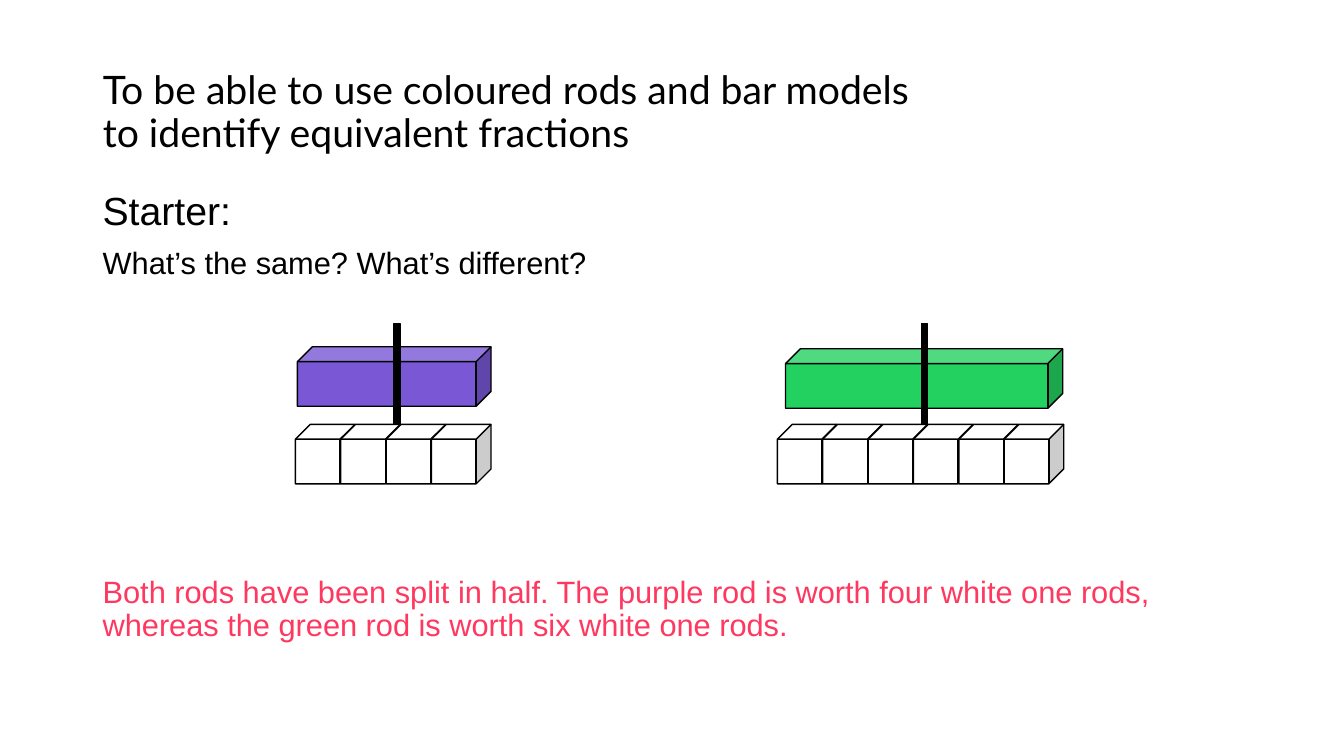
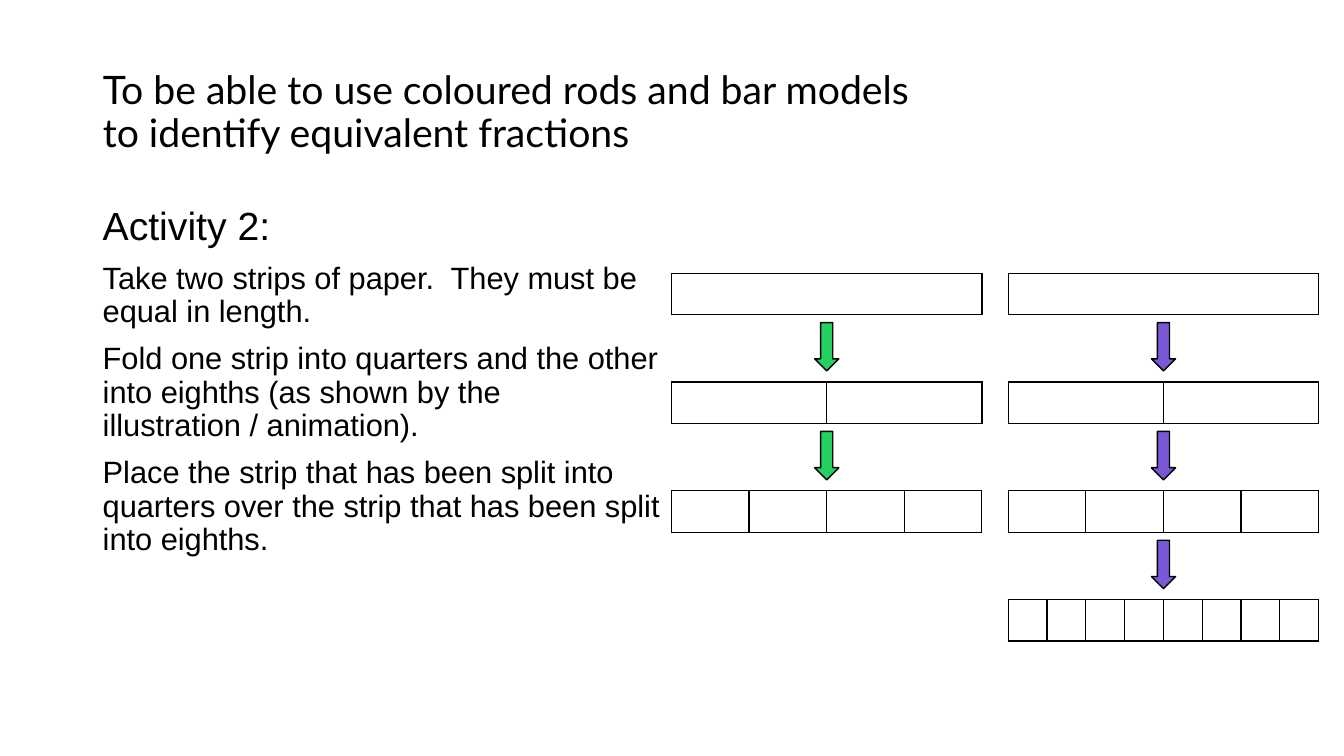
from typing import NamedTuple

from lxml import etree
from pptx import Presentation
from pptx.dml.color import RGBColor
from pptx.enum.shapes import MSO_SHAPE
from pptx.enum.text import MSO_ANCHOR, MSO_AUTO_SIZE, PP_ALIGN
from pptx.oxml.ns import qn
from pptx.slide import Slide
from pptx.util import Inches, Pt

BLACK = RGBColor(0x00, 0x00, 0x00)
WHITE = RGBColor(0xFF, 0xFF, 0xFF)
GREEN = RGBColor(0x23, 0xD1, 0x60)
PURPLE = RGBColor(0x79, 0x57, 0xD5)
PINK = RGBColor(0xFF, 0x38, 0x60)

CUBE = MSO_SHAPE.CUBE
RECT = MSO_SHAPE.RECTANGLE
ARROW = MSO_SHAPE.DOWN_ARROW
LEFT = PP_ALIGN.LEFT
MIDDLE = MSO_ANCHOR.MIDDLE
TOP = MSO_ANCHOR.TOP
FIXED = MSO_AUTO_SIZE.NONE

TITLE = "To be able to use coloured rods and bar models\vto identify equivalent fractions"
MARGIN = 0.92
HEAD = 28
BODY = 22
CUBE_SIZE = 0.59
CUBE_STEP = 0.45
CUBE_TOP = 4.21
STRIP_TOP = 2.71
STRIP_STEP = 1.08
STRIP_WIDTH = 3.08
STRIP_HEIGHT = 0.41
ARROW_WIDTH = 0.24
ARROW_HEIGHT = 0.48
ARROW_DROP = 0.49


class Box(NamedTuple):
    left: float
    top: float
    width: float
    height: float


class Line(NamedTuple):
    text: str
    size: int = BODY
    color: RGBColor = BLACK


class Rod(NamedTuple):
    box: Box
    color: RGBColor
    ones: int
    start: float
    split: float


class Fold(NamedTuple):
    left: float
    color: RGBColor
    steps: int


RODS = [
    Rod(Box(2.95, 3.44, 1.92, CUBE_SIZE), PURPLE, 4, 2.93, 3.91),
    Rod(Box(7.79, 3.46, 2.75, CUBE_SIZE), GREEN, 6, 7.71, 9.14),
]
FOLDS = [Fold(6.66, GREEN, 3), Fold(10, PURPLE, 4)]


def inches(box: Box) -> list[int]:
    return [Inches(value) for value in box]


def add_slide(deck) -> Slide:
    slide = deck.slides.add_slide(deck.slide_layouts[5])
    title = slide.shapes.title
    title.left, title.top, title.width, title.height = inches(Box(MARGIN, 0.4, 9.6, 1.45))
    frame = title.text_frame
    frame.text = TITLE
    frame.word_wrap = True
    frame.auto_size = FIXED
    frame.vertical_anchor = MIDDLE
    para = frame.paragraphs[0]
    para.alignment = LEFT
    para.line_spacing = 0.9
    para.font.name = "Lato"
    para.font.size = Pt(HEAD)
    para.font.color.rgb = BLACK
    return slide


def add_text(slide: Slide, box: Box, lines: list[Line]) -> None:
    frame = slide.shapes.add_textbox(*inches(box)).text_frame
    frame.word_wrap = True
    frame.vertical_anchor = TOP
    for index, line in enumerate(lines):
        para = frame.add_paragraph() if index else frame.paragraphs[0]
        para.text = line.text
        para.line_spacing = 0.9
        para.space_before = Pt(10 if index else 0)
        para.font.name = "Arial"
        para.font.size = Pt(line.size)
        para.font.color.rgb = line.color


def add_solid(slide: Slide, kind: MSO_SHAPE, box: Box, color: RGBColor) -> None:
    shape = slide.shapes.add_shape(kind, *inches(box))
    shape.shadow.inherit = False
    shape.fill.solid()
    shape.fill.fore_color.rgb = color
    shape.line.color.rgb = BLACK
    shape.line.width = Pt(1)


def add_rod(slide: Slide, rod: Rod) -> None:
    for index in range(rod.ones):
        left = rod.start + index * CUBE_STEP
        add_solid(slide, CUBE, Box(left, CUBE_TOP, CUBE_SIZE, CUBE_SIZE), WHITE)
    add_solid(slide, CUBE, rod.box, rod.color)
    add_solid(slide, RECT, Box(rod.split, 3.21, 0.06, 1), BLACK)


def add_border(cell) -> None:
    props = cell._tc.get_or_add_tcPr()
    for side in ("a:lnL", "a:lnR", "a:lnT", "a:lnB"):
        edge = etree.SubElement(props, qn(side), w=str(Pt(1)))
        fill = etree.SubElement(edge, qn("a:solidFill"))
        etree.SubElement(fill, qn("a:srgbClr"), val=str(BLACK))


def add_strip(slide: Slide, box: Box, parts: int) -> None:
    table = slide.shapes.add_table(1, parts, *inches(box)).table
    table.first_row = False
    table.horz_banding = False
    for column in table.columns:
        column.width = Inches(box.width / parts)
    for cell in table.iter_cells():
        add_border(cell)
        cell.fill.solid()
        cell.fill.fore_color.rgb = WHITE
        cell.text_frame.paragraphs[0].font.size = Pt(12)


def add_fold(slide: Slide, fold: Fold) -> None:
    center = fold.left + STRIP_WIDTH / 2
    for step in range(fold.steps):
        top = STRIP_TOP + step * STRIP_STEP
        add_strip(slide, Box(fold.left, top, STRIP_WIDTH, STRIP_HEIGHT), 2**step)
        if step < fold.steps - 1:
            arrow = Box(center - ARROW_WIDTH / 2, top + ARROW_DROP, ARROW_WIDTH, ARROW_HEIGHT)
            add_solid(slide, ARROW, arrow, fold.color)


def add_starter(deck) -> None:
    slide = add_slide(deck)
    add_text(slide, Box(MARGIN, 1.85, 11.5, 1.1), [
        Line("Starter:", HEAD),
        Line("What’s the same? What’s different?"),
    ])
    add_text(slide, Box(MARGIN, 5.67, 11.5, 0.94), [
        Line(
            "Both rods have been split in half. The purple rod is worth four white one rods, "
            "whereas the green rod is worth six white one rods.",
            color=PINK,
        ),
    ])
    for rod in RODS:
        add_rod(slide, rod)


def add_task(deck) -> None:
    slide = add_slide(deck)
    add_text(slide, Box(MARGIN, 2, 5.75, 4.76), [
        Line("Activity 2:", HEAD),
        Line("Take two strips of paper.  They must be equal in length."),
        Line(
            "Fold one strip into quarters and the other into eighths "
            "(as shown by the illustration / animation)."
        ),
        Line(
            "Place the strip that has been split into quarters over the strip "
            "that has been split into eighths."
        ),
    ])
    for fold in FOLDS:
        add_fold(slide, fold)


def main() -> None:
    deck = Presentation()
    deck.slide_width = Inches(13.33)
    deck.slide_height = Inches(7.5)
    add_starter(deck)
    add_task(deck)
    deck.save("out.pptx")


if __name__ == "__main__":
    main()
